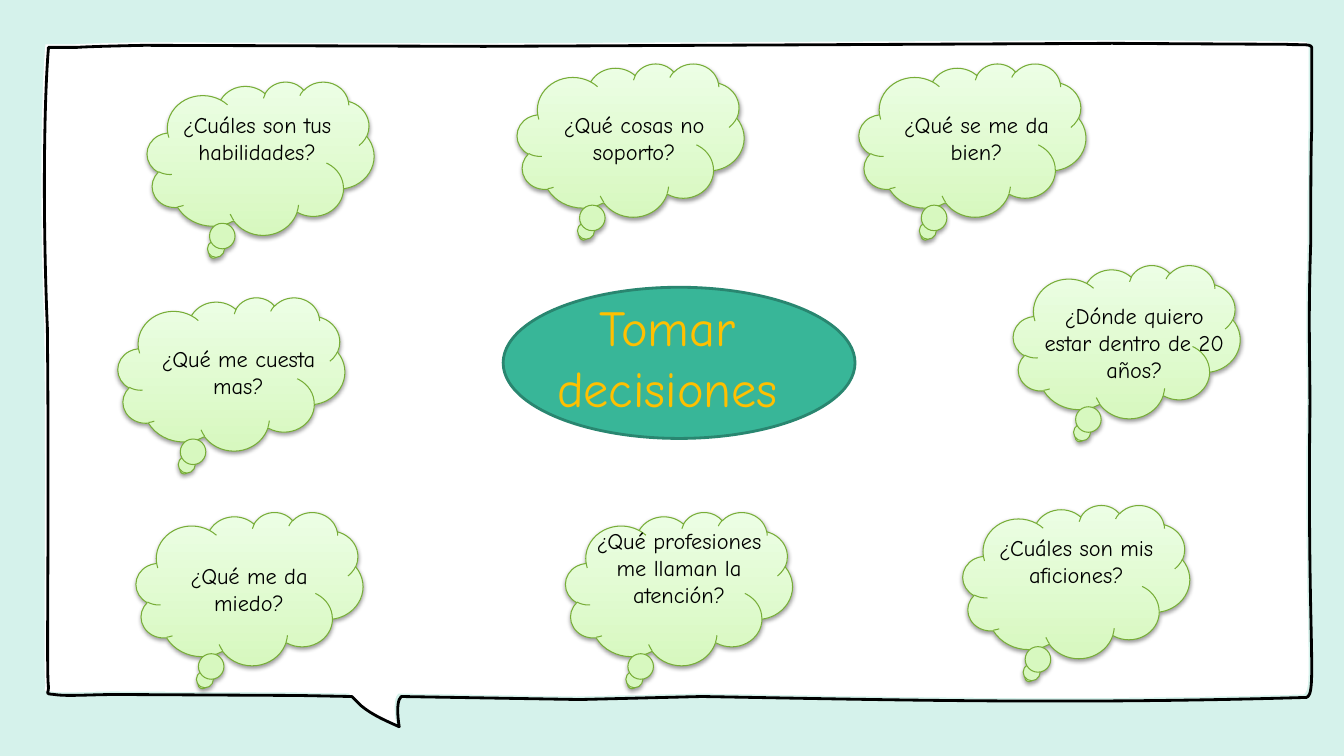
from lxml import etree
from pptx import Presentation
from pptx.dml.color import RGBColor
from pptx.enum.shapes import MSO_SHAPE as SHAPE
from pptx.enum.text import MSO_ANCHOR as ANCHOR, MSO_AUTO_SIZE as AUTO, PP_ALIGN as ALIGN
from pptx.oxml.ns import qn
from pptx.util import Inches, Pt

FONT = "Comic Neue"
TITLE = "Tomar decisiones"
CLOUD_SIZE = (2.25, 1.52)

# Question, cloud corner, text box (left, top, width, height)
QUESTIONS = [
    ("¿Cuáles son tus habilidades?", (1.46, 0.81), (1.6, 1.05, 1.9, 0.9)),
    ("¿Qué me cuesta mas?", (1.17, 2.95), (1.46, 3.38, 1.81, 0.63)),
    ("¿Qué me da miedo?", (1.35, 5.08), (1.63, 5.53, 1.68, 0.63)),
    ("¿Qué cosas no soporto?", (5.13, 0.63), (5.41, 1.05, 1.76, 0.63)),
    ("¿Qué se me da bien?", (8.52, 0.63), (8.8, 1.05, 1.77, 0.63)),
    ("¿Dónde quiero estar dentro de 20 años?", (10.05, 2.63), (10.21, 2.95, 2.08, 0.9)),
    ("¿Qué profesiones me llaman la atención?", (5.61, 5.08), (5.7, 5.18, 2.07, 1.16)),
    ("¿Cuáles son mis aficiones?", (9.55, 5.01), (9.79, 5.25, 1.77, 0.63)),
]

# Speech bubble outline: two numbers are a line, six are a cubic curve
BUBBLE_FRAME = (0.44, 0.43, 12.57, 6.78)
BUBBLE_START = (11.03, 0.43)
BUBBLE = [
    (12.76, 0.44),
    (12.89, 0.45, 13, 0.43, 13.01, 0.47),
    (13.01, 0.77),
    (13.01, 0.94, 13.01, 1.13, 13.01, 1.3),
    (13, 1.42, 13, 2.35, 13, 2.42),
    (12.97, 3.3, 13, 3.65, 12.99, 4.25),
    (12.97, 6.56, 13.08, 6.95, 12.93, 6.92),
    (10.56, 6.99, 8.72, 6.94, 6.96, 6.91),
    (5.75, 6.94), (3.98, 6.91), (3.96, 6.94),
    (3.94, 6.99, 3.94, 7.09, 3.96, 7.21),
    (3.85, 7.16, 3.7, 7.1, 3.58, 7),
    (3.49, 6.91), (2.96, 6.9), (1.17, 6.89),
    (0.9, 6.89, 0.66, 6.91, 0.54, 6.89),
    (0.43, 6.88, 0.49, 6.89, 0.48, 6.8),
    (0.46, 6.65, 0.49, 5.22, 0.47, 3.25),
    (0.42, 2.07, 0.44, 0.96, 0.48, 0.49),
    (0.48, 0.48, 0.48, 0.48, 0.48, 0.47),
    (0.54, 0.47), (0.77, 0.47),
    (0.9, 0.46, 1.43, 0.45, 1.43, 0.45),
    (4.8, 0.46), BUBBLE_START,
]
FILL_SHIFT = -0.03


def rgb(color):
    return RGBColor.from_string(color)


def paint(sp, fill=None, line=None, width=1):
    sp.shadow.inherit = False
    if fill:
        sp.fill.solid()
        sp.fill.fore_color.rgb = rgb(fill)
    else:
        sp.fill.background()
    if line:
        sp.line.color.rgb = rgb(line)
        sp.line.width = Pt(width)
    else:
        sp.line.fill.background()


def write(sp, text, size=16, color="000000"):
    tf = sp.text_frame
    tf.word_wrap = True
    tf.auto_size = AUTO.SHAPE_TO_FIT_TEXT
    tf.vertical_anchor = ANCHOR.TOP
    p = tf.paragraphs[0]
    p.alignment = ALIGN.CENTER
    r = p.add_run()
    r.text = text
    r.font.name, r.font.size, r.font.color.rgb = FONT, Pt(size), rgb(color)


def add_bubble(shapes, shift, **style):
    builder = shapes.build_freeform(*map(Inches, BUBBLE_START))
    builder.add_line_segments([tuple(map(Inches, step[-2:])) for step in BUBBLE], close=True)
    sp = builder.convert_to_shape()
    left, top, width, height = BUBBLE_FRAME
    sp.left, sp.top = Inches(left + shift), Inches(top + shift)
    sp.width, sp.height = Inches(width), Inches(height)

    # Redraw the segments inside the frame, with true curves
    outline = next(sp._element.iter(qn("a:path")))
    outline.set("w", str(Inches(width)))
    outline.set("h", str(Inches(height)))
    for node, step in zip(list(outline), [BUBBLE_START] + BUBBLE):
        if len(step) == 6:
            node.tag = qn("a:cubicBezTo")
        for point in list(node):
            node.remove(point)
        for x, y in zip(step[::2], step[1::2]):
            etree.SubElement(node, qn("a:pt"), x=str(Inches(x - left)), y=str(Inches(y - top)))
    paint(sp, **style)


def add_cloud(shapes, corner):
    sp = shapes.add_shape(SHAPE.CLOUD_CALLOUT, *map(Inches, corner + CLOUD_SIZE))
    sp.adjustments[0], sp.adjustments[1] = -0.208, 0.625
    paint(sp, line="77AD37", width=0.75)
    sp.fill.gradient()
    sp.fill.gradient_angle = 90
    for stop, position, color in zip(sp.fill.gradient_stops, (0, 1), ("D7F8BF", "ECFEE5")):
        stop.position = position
        stop.color.rgb = rgb(color)
    # Soft shadow below the cloud
    effects = sp._element.spPr.find(qn("a:effectLst"))
    shadow = etree.SubElement(effects, qn("a:outerShdw"), blurRad=str(Pt(3.1)),
                              dist=str(Pt(1.6)), dir="5400000", rotWithShape="0")
    black = etree.SubElement(shadow, qn("a:srgbClr"), val="000000")
    etree.SubElement(black, qn("a:alpha"), val="38000")


def main():
    prs = Presentation()
    prs.slide_width, prs.slide_height = Inches(13.33), Inches(7.5)
    s = prs.slides.add_slide(prs.slide_layouts[5])
    s.background.fill.solid()
    s.background.fill.fore_color.rgb = rgb("D5F2EB")

    # Speech bubble: shifted white fill and a black outline
    add_bubble(s.shapes, FILL_SHIFT, fill="FFFFFF")
    add_bubble(s.shapes, 0, line="000000", width=2)

    # Central topic, with the title in front of the ellipse
    ellipse = s.shapes.add_shape(SHAPE.OVAL, *map(Inches, (4.99, 2.85, 3.49, 1.5)))
    paint(ellipse, fill="38B698", line="298670", width=2)
    title = s.shapes.title
    title.left, title.top, title.width, title.height = map(Inches, (4.95, 2.89, 3.34, 1.3))
    write(title, TITLE, size=36, color="FFC000")
    ellipse._element.addnext(title._element)

    # Clouds around the topic, then their questions
    for _, corner, _ in QUESTIONS:
        add_cloud(s.shapes, corner)
    for question, _, box in QUESTIONS:
        write(s.shapes.add_textbox(*map(Inches, box)), question)

    prs.save("out.pptx")


if __name__ == "__main__":
    main()
